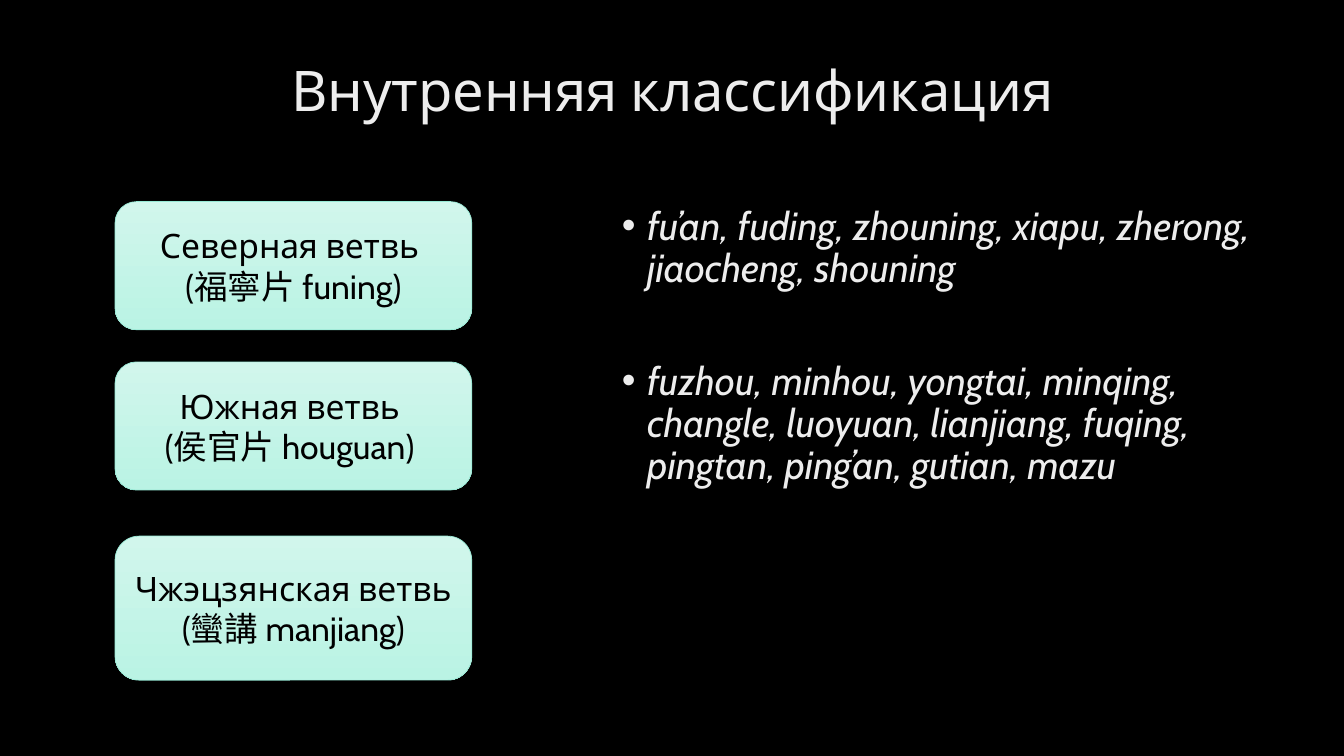
from lxml import etree
from pptx import Presentation
from pptx.dml.color import RGBColor
from pptx.enum.shapes import MSO_SHAPE
from pptx.enum.text import MSO_ANCHOR, PP_ALIGN
from pptx.oxml.ns import qn
from pptx.util import Cm, Pt

ROUND = MSO_SHAPE.ROUNDED_RECTANGLE
MIDDLE = MSO_ANCHOR.MIDDLE
CENTER = PP_ALIGN.CENTER
COLORS = {
    "back": "000000",
    "light": "EDEDED",
    "dark": "000000",
    "top": "D1F6EC",
    "base": "BAF3E4",
    "edge": "97E9D5",
}
BRANCHES = [
    (5.08, 3.23, "Северная ветвь \n(福寧片 funing)"),
    (9.12, 3.23, "Южная ветвь \n(侯官片 houguan) "),
    (13.51, 3.63, "Чжэцзянская ветвь\v(蠻講 manjiang)"),
]
DIALECTS = [
    "fu’an, fuding, zhouning, xiapu, zherong, jiaocheng, shouning",
    "fuzhou, minhou, yongtai, minqing, changle, luoyuan, lianjiang, "
    "fuqing, pingtan, ping’an, gutian, mazu",
]


class Board:
    font = "Cabin"

    def __init__(self, deck):
        self.slide = deck.slides.add_slide(deck.slide_layouts[6])
        fill = self.slide.background.fill
        fill.solid()
        fill.fore_color.rgb = self.color("back")

    def color(self, name):
        return RGBColor.from_string(COLORS[name])

    def style(self, para, size, color, italic=False):
        for run in para.runs:
            run.font.name = self.font
            run.font.size = Pt(size)
            run.font.italic = italic
            run.font.color.rgb = self.color(color)

    def box(self, left, top, width, height, text):
        area = self.slide.shapes.add_textbox(
            Cm(left), Cm(top), Cm(width), Cm(height))
        frame = area.text_frame
        frame.word_wrap = True
        frame.text = text
        for para in frame.paragraphs:
            para.line_spacing = 0.9
        return frame

    def title(self, left, top, width, height, text):
        frame = self.box(left, top, width, height, text)
        frame.vertical_anchor = MIDDLE
        para = frame.paragraphs[0]
        para.alignment = CENTER
        self.style(para, 40, "light")

    def bullets(self, left, top, width, height, items, gap):
        frame = self.box(left, top, width, height, "\n".join(items))
        for index, para in enumerate(frame.paragraphs):
            if index:
                para.space_before = Pt(gap)
            props = para._p.get_or_add_pPr()
            props.set("marL", str(Cm(0.64)))
            props.set("indent", str(Cm(-0.64)))
            etree.SubElement(props, qn("a:buFont"), typeface="Arial")
            etree.SubElement(props, qn("a:buChar"), char="•")
            self.style(para, 28, "light", italic=True)

    def card(self, left, top, width, height, text):
        shape = self.slide.shapes.add_shape(
            ROUND, Cm(left), Cm(top), Cm(width), Cm(height))
        shape.shadow.inherit = False
        shape.fill.gradient()
        shape.fill.gradient_angle = 270
        for stop, name in zip(shape.fill.gradient_stops, ("top", "base")):
            stop.color.rgb = self.color(name)
        shape.line.color.rgb = self.color("edge")
        shape.line.width = Pt(0.5)
        frame = shape.text_frame
        frame.word_wrap = True
        frame.vertical_anchor = MIDDLE
        frame.text = text
        for para in frame.paragraphs:
            para.alignment = CENTER
            self.style(para, 24, "dark")


def main():
    deck = Presentation()
    deck.slide_width = Cm(33.87)
    deck.slide_height = Cm(19.05)
    board = Board(deck)
    board.title(2.34, 1.02, 29.21, 2.67, "Внутренняя классификация")
    board.bullets(15.42, 5.08, 17.2, 12.09, DIALECTS, 50)
    for top, height, text in BRANCHES:
        board.card(2.9, top, 8.99, height, text)
    deck.save("out.pptx")


if __name__ == "__main__":
    main()
